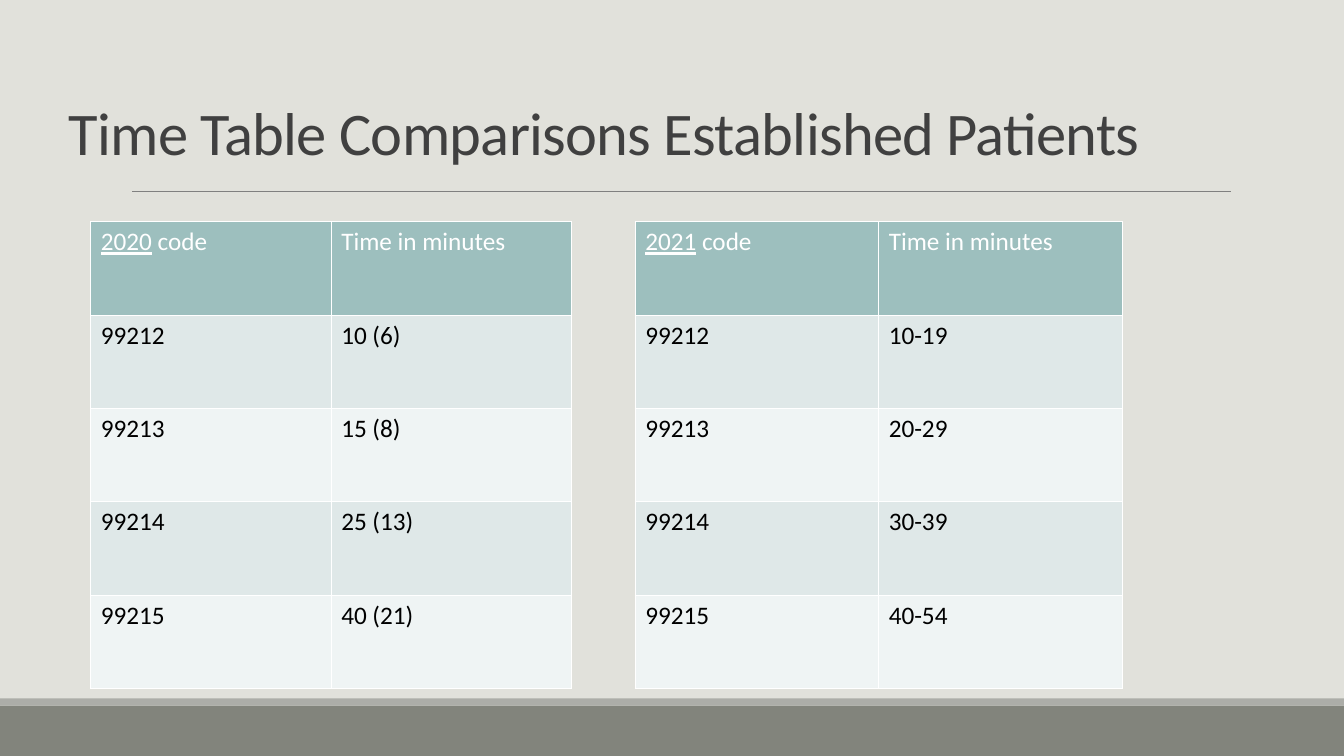
from lxml import etree
from pptx import Presentation
from pptx import util as u
from pptx.dml.color import RGBColor
from pptx.enum import shapes, text
from pptx.oxml import ns

COLORS = {
    "background": "E1E1DB", "footer": "82847C", "footer_edge": "ACADA8",
    "rule": "808080", "title": "404040", "header": "9DBFBE",
    "band_dark": "DFE8E8", "band_light": "EFF4F4",
    "white": "FFFFFF", "black": "000000",
}
CODES = ["99212", "99213", "99214", "99215"]
TABLES = [
    ("2020", 0.9, 4.77, ["10 (6)", "15 (8)", "25 (13)", "40 (21)"]),
    ("2021", 6.3, 4.83, ["10-19", "20-29", "30-39", "40-54"]),
]


def rgb(name):
    """Return the named colour."""
    return RGBColor.from_string(COLORS[name])


def add_text(p, content, *, size=18, color="black", underline=False, font="Calibri"):
    """Add a formatted run to a paragraph and return it."""
    r = p.add_run()
    r.text = content
    r.font.name = font
    r.font.size = u.Pt(size)
    r.font.bold = False
    r.font.underline = underline
    r.font.color.rgb = rgb(color)
    return r


class SlideBuilder:
    """Hold the style and the current slide."""

    def __init__(self, prs):
        """Add a title-only slide with a plain background."""
        self.s = prs.slides.add_slide(prs.slide_layouts[5])
        fill = self.s.background.fill
        fill.solid()
        fill.fore_color.rgb = rgb("background")

    def bar(self, top, height, color):
        """Draw a full-width bar."""
        sp = self.s.shapes.add_shape(
            shapes.MSO_SHAPE.RECTANGLE, 0, u.Inches(top), u.Inches(13.33), u.Inches(height))
        sp.shadow.inherit = False
        sp.fill.solid()
        sp.fill.fore_color.rgb = rgb(color)
        sp.line.fill.background()

    def rule(self, left, right, y):
        """Draw a thin horizontal line."""
        line = self.s.shapes.add_connector(
            shapes.MSO_CONNECTOR.STRAIGHT, u.Inches(left), u.Inches(y), u.Inches(right), u.Inches(y))
        line.line.color.rgb = rgb("rule")
        line.line.width = u.Pt(0.5)
        etree.SubElement(line._element.spPr, ns.qn("a:effectLst"))

    def title(self, content):
        """Place and format the title."""
        sp = self.s.shapes.title
        sp.left, sp.top = u.Inches(0.58), u.Inches(0.97)
        sp.width, sp.height = u.Inches(11.62), u.Inches(0.75)
        tf = sp.text_frame
        tf.word_wrap = True
        tf.auto_size = text.MSO_AUTO_SIZE.NONE
        tf.vertical_anchor = text.MSO_ANCHOR.BOTTOM
        p = tf.paragraphs[0]
        p.alignment = text.PP_ALIGN.LEFT
        p.line_spacing = 0.85
        r = add_text(p, content, size=43.2, color="title")
        r.font._element.set("spc", "-50")

    def cell(self, cell, runs, fill, color):
        """Fill a cell, write its runs and outline it in white."""
        cell.fill.solid()
        cell.fill.fore_color.rgb = rgb(fill)
        p = cell.text_frame.paragraphs[0]
        for content, underline in runs:
            add_text(p, content, color=color, underline=underline)
        tc_pr = cell._tc.get_or_add_tcPr()
        for i, side in enumerate(("lnL", "lnR", "lnT", "lnB")):
            ln = etree.Element(ns.qn(f"a:{side}"), w=str(u.Pt(1)))
            solid = etree.SubElement(ln, ns.qn("a:solidFill"))
            etree.SubElement(solid, ns.qn("a:srgbClr"), val=COLORS["white"])
            tc_pr.insert(i, ln)

    def time_table(self, year, left, width, times):
        """Add the table of codes and minutes for one year."""
        rows = len(CODES) + 1
        table = self.s.shapes.add_table(
            rows, 2, u.Inches(left), u.Inches(2.2), u.Inches(width), u.Inches(4.63)).table
        header = [[(year, True), (" code", False)], [("Time in minutes", False)]]
        for col, runs in enumerate(header):
            self.cell(table.cell(0, col), runs, "header", "white")
        for row, values in enumerate(zip(CODES, times), 1):
            fill = "band_dark" if row % 2 else "band_light"
            for col, value in enumerate(values):
                self.cell(table.cell(row, col), [(value, False)], fill, "black")


def main():
    """Build and save the slide."""
    prs = Presentation()
    prs.slide_width, prs.slide_height = u.Inches(13.33), u.Inches(7.5)
    slide = SlideBuilder(prs)
    slide.bar(7, 0.5, "footer")
    slide.bar(6.93, 0.07, "footer_edge")
    slide.rule(1.31, 12.21, 1.9)
    slide.title("Time Table Comparisons Established Patients")
    for entry in TABLES:
        slide.time_table(*entry)
    prs.save("out.pptx")


if __name__ == "__main__":
    main()
